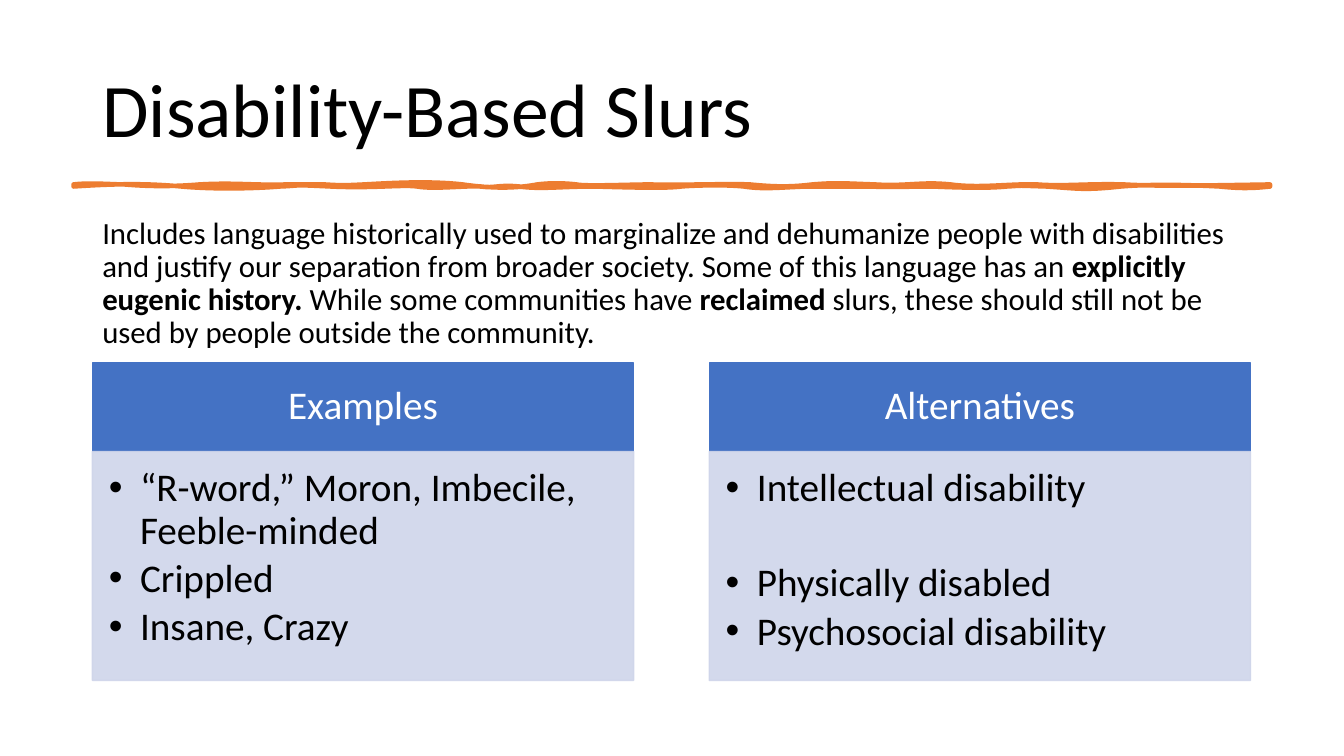
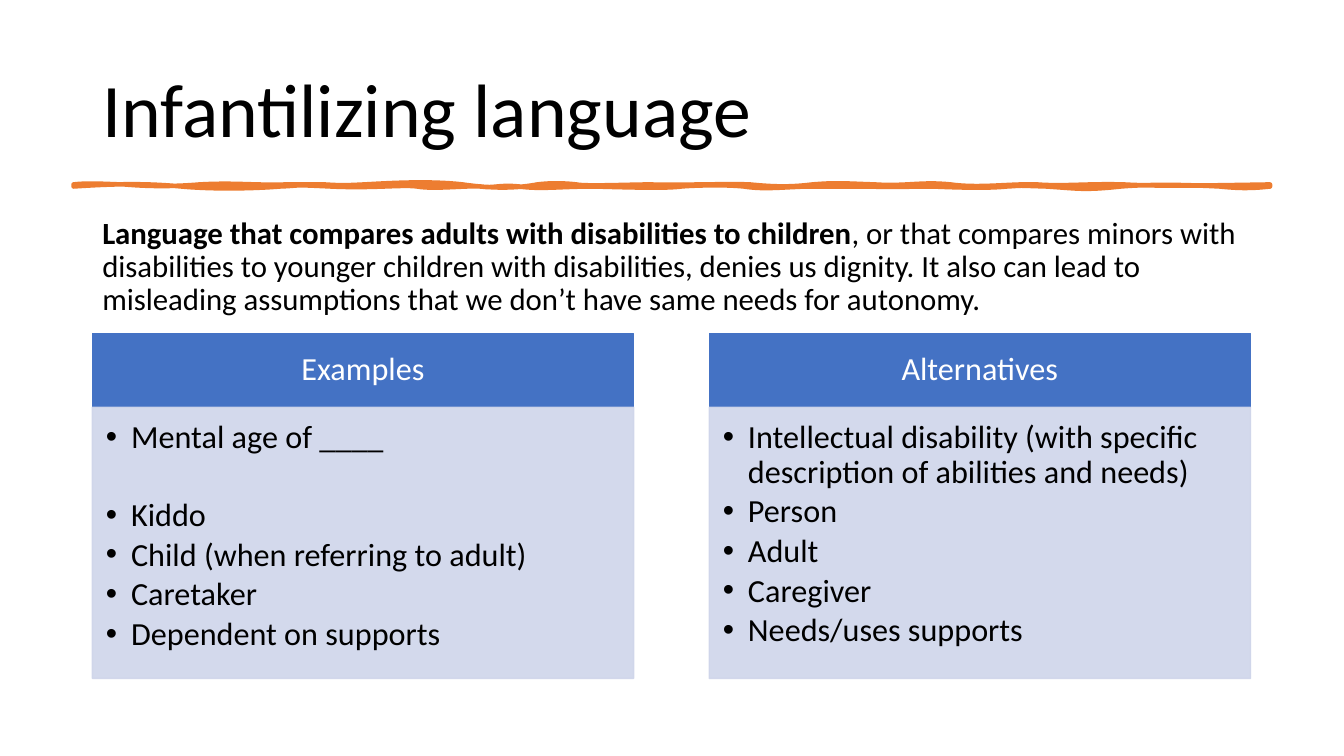
from dataclasses import dataclass
from typing import NamedTuple

from lxml.etree import SubElement
from pptx import Presentation
from pptx.dml.color import RGBColor
from pptx.enum.shapes import MSO_SHAPE as Preset
from pptx.enum.text import MSO_ANCHOR as Anchor, PP_ALIGN as Align
from pptx.oxml.ns import qn
from pptx.util import Inches, Pt

FONT = "Calibri"
BLACK, WHITE = "000000", "FFFFFF"
ORANGE, BLUE, PALE_BLUE = "ED7D31", "4472C4", "CFD5EA"
SLIDE_WIDTH, SLIDE_HEIGHT = 40 / 3, 7.5
CONTENT_WIDTH = 11.5
LEFT = (SLIDE_WIDTH - CONTENT_WIDTH) / 2
COLUMN_WIDTH, COLUMN_STEP = 5.37, 6.12
INTRO_TOP = 2.11
TITLE_SIZE, INTRO_SIZE = 54, 22

BRUSH_START = (0.73, 1.83)
BRUSH_CURVES = (
    (0.89, 1.81, 1.11, 1.83, 1.24, 1.83), (1.36, 1.84, 1.62, 1.86, 1.98, 1.83),
    (2.34, 1.81, 2.51, 1.84, 2.84, 1.83), (3.17, 1.83, 3.07, 1.83, 3.22, 1.83),
    (3.38, 1.84, 3.42, 1.84, 3.61, 1.83), (3.8, 1.82, 4.24, 1.79, 4.59, 1.83),
    (4.94, 1.88, 5.17, 1.86, 5.33, 1.83), (5.49, 1.81, 5.63, 1.82, 5.72, 1.83),
    (5.81, 1.85, 6.25, 1.83, 6.46, 1.83), (6.67, 1.84, 7.23, 1.82, 7.44, 1.83),
    (7.65, 1.85, 7.82, 1.86, 8.06, 1.83), (8.3, 1.81, 8.38, 1.82, 8.68, 1.83),
    (8.99, 1.85, 9.14, 1.8, 9.43, 1.83), (9.72, 1.87, 10.02, 1.82, 10.29, 1.83),
    (10.55, 1.85, 10.78, 1.82, 11.15, 1.83), (11.51, 1.85, 11.99, 1.84, 12.6, 1.83),
    (12.6, 1.84, 12.6, 1.84, 12.6, 1.85), (12.42, 1.87, 12.3, 1.87, 12.1, 1.85),
    (11.9, 1.84, 11.49, 1.82, 11.12, 1.85), (10.75, 1.89, 10.7, 1.87, 10.38, 1.85),
    (10.05, 1.84, 10.18, 1.84, 9.99, 1.85), (9.8, 1.87, 9.48, 1.86, 9.25, 1.85),
    (9.02, 1.85, 8.84, 1.86, 8.63, 1.85), (8.41, 1.85, 8.28, 1.85, 8, 1.85),
    (7.73, 1.86, 7.57, 1.88, 7.38, 1.85), (7.19, 1.83, 6.88, 1.84, 6.76, 1.85),
    (6.63, 1.87, 6.24, 1.86, 5.9, 1.85), (5.55, 1.85, 5.37, 1.88, 5.15, 1.85),
    (4.94, 1.83, 4.91, 1.87, 4.77, 1.85), (4.63, 1.84, 4.3, 1.88, 4.14, 1.85),
    (3.99, 1.83, 3.71, 1.87, 3.28, 1.85), (2.86, 1.83, 3.03, 1.84, 2.78, 1.85),
    (2.53, 1.87, 2.13, 1.88, 1.8, 1.85), (1.47, 1.82, 1.18, 1.82, 0.73, 1.85),
    (0.73, 1.84, 0.73, 1.84, 0.73, 1.83),
)


class Phrase(NamedTuple):
    text: str
    bold: bool = False


class Term(NamedTuple):
    text: str
    gap_after: bool = False


class Box(NamedTuple):
    left: float
    top: float
    width: float
    height: float

    def lengths(self) -> list:
        return [Inches(side) for side in self]


@dataclass(frozen=True)
class Topic:
    title: str
    intro: tuple[Phrase, ...]
    columns: dict[str, tuple[Term, ...]]
    top: float
    heading_height: float
    list_height: float
    size: int
    indent: float


TOPICS = (
    Topic(
        "Disability-Based Slurs",
        (
            Phrase("Includes language historically used to marginalize and dehumanize people "
                   "with disabilities and justify our separation from broader society. "
                   "Some of this language has an "),
            Phrase("explicitly eugenic history. ", True),
            Phrase("While some communities have "),
            Phrase("reclaimed", True),
            Phrase(" slurs, these should still not be used by people outside the community."),
        ),
        {
            "Examples": (Term("“R-word,” Moron, Imbecile, Feeble-minded"),
                         Term("Crippled"), Term("Insane, Crazy")),
            "Alternatives": (Term("Intellectual disability", True),
                             Term("Physically disabled"), Term("Psychosocial disability")),
        },
        top=3.6, heading_height=0.88, list_height=2.27, size=28, indent=0.31,
    ),
    Topic(
        "Infantilizing language",
        (
            Phrase("Language that compares adults with disabilities to children", True),
            Phrase(", or that compares minors with disabilities to younger children with "
                   "disabilities, denies us dignity. It also can lead to misleading "
                   "assumptions that we don’t have same needs for autonomy."),
        ),
        {
            "Examples": (Term("Mental age of ____", True), Term("Kiddo"),
                         Term("Child (when referring to adult)"), Term("Caretaker"),
                         Term("Dependent on supports")),
            "Alternatives": (
                Term("Intellectual disability (with specific description of abilities and needs)"),
                Term("Person"), Term("Adult"), Term("Caregiver"), Term("Needs/uses supports")),
        },
        top=3.31, heading_height=0.73, list_height=2.69, size=23, indent=0.25,
    ),
)


def paint_fill(fill, color: str, opacity: int) -> None:
    fill.solid()
    fill.fore_color.rgb = RGBColor.from_string(color)
    if opacity < 100:
        choice = fill._xPr.find(qn("a:solidFill")).find(qn("a:srgbClr"))
        SubElement(choice, qn("a:alpha")).set("val", str(opacity * 1000))


def paint_shape(shape, color: str, line_width: float, opacity: int = 100) -> None:
    shape.shadow.inherit = False
    shape.line.width = Pt(line_width)
    for fill in (shape.fill, shape.line.fill):
        paint_fill(fill, color, opacity)


def set_frame(frame, anchor: Anchor, insets: tuple[float, ...]) -> None:
    frame.word_wrap = True
    frame.vertical_anchor = anchor
    (frame.margin_left, frame.margin_top,
     frame.margin_right, frame.margin_bottom) = (Inches(inset) for inset in insets)


def write(paragraph, phrases: tuple[Phrase, ...], size: int, color: str = BLACK,
          align: Align = Align.LEFT) -> None:
    paragraph.alignment = align
    paragraph.line_spacing = 0.9
    for phrase in phrases:
        run = paragraph.add_run()
        run.text = phrase.text
        run.font.name = FONT
        run.font.size = Pt(size)
        run.font.bold = phrase.bold
        run.font.color.rgb = RGBColor.from_string(color)


def add_text(slide, box: Box, phrases: tuple[Phrase, ...], size: int, anchor: Anchor) -> None:
    frame = slide.shapes.add_textbox(*box.lengths()).text_frame
    set_frame(frame, anchor, (0.1, 0.05, 0.1, 0.05))
    write(frame.paragraphs[0], phrases, size)


def add_panel(slide, box: Box, color: str, opacity: int = 100):
    panel = slide.shapes.add_shape(Preset.RECTANGLE, *box.lengths())
    paint_shape(panel, color, 1, opacity)
    return panel.text_frame


def add_bullet(paragraph, indent: float) -> None:
    properties = paragraph._p.get_or_add_pPr()
    properties.set("marL", str(Inches(indent)))
    properties.set("indent", str(-Inches(indent)))
    SubElement(properties, qn("a:buFont")).set("typeface", "Arial")
    SubElement(properties, qn("a:buChar")).set("char", "•")


def add_brush_stroke(slide) -> None:
    origin_x, origin_y = BRUSH_START
    builder = slide.shapes.build_freeform(Inches(origin_x), Inches(origin_y))
    builder.add_line_segments([(Inches(x), Inches(y)) for *_, x, y in BRUSH_CURVES], close=True)
    stroke = builder.convert_to_shape()
    paint_shape(stroke, ORANGE, 3.25)
    for segment, curve in zip(list(stroke._element.iter(qn("a:lnTo"))), BRUSH_CURVES):
        bend = SubElement(segment.getparent(), qn("a:cubicBezTo"))
        for x, y in zip(curve[::2], curve[1::2]):
            knot = SubElement(bend, qn("a:pt"))
            knot.set("x", str(Inches(x - origin_x)))
            knot.set("y", str(Inches(y - origin_y)))
        segment.getparent().replace(segment, bend)


def add_column(slide, topic: Topic, left: float, heading: str, terms: tuple[Term, ...]) -> None:
    size = topic.size
    side, edge, near, bottom = (size / 72 * ems for ems in (0.56, 0.32, 0.42, 0.63))

    caption = add_panel(slide, Box(left, topic.top, COLUMN_WIDTH, topic.heading_height), BLUE)
    set_frame(caption, Anchor.MIDDLE, (side, edge, side, edge))
    write(caption.paragraphs[0], (Phrase(heading),), size, WHITE, Align.CENTER)

    list_top = topic.top + topic.heading_height
    listing = add_panel(slide, Box(left, list_top, COLUMN_WIDTH, topic.list_height),
                        PALE_BLUE, 90)
    set_frame(listing, Anchor.TOP, (near, near, side, bottom))
    for index, term in enumerate(terms):
        paragraph = listing.add_paragraph() if index else listing.paragraphs[0]
        write(paragraph, (Phrase(term.text),), size)
        paragraph.space_after = Pt(size * (1.34 if term.gap_after else 0.15))
        add_bullet(paragraph, topic.indent)


def add_topic(deck, topic: Topic) -> None:
    slide = deck.slides.add_slide(deck.slide_layouts[6])
    add_text(slide, Box(LEFT, 0.4, CONTENT_WIDTH, 1.45), (Phrase(topic.title),),
             TITLE_SIZE, Anchor.MIDDLE)
    add_brush_stroke(slide)
    add_text(slide, Box(LEFT, INTRO_TOP, CONTENT_WIDTH, 4.65), topic.intro,
             INTRO_SIZE, Anchor.TOP)
    for index, (heading, terms) in enumerate(topic.columns.items()):
        add_column(slide, topic, LEFT + index * COLUMN_STEP, heading, terms)


def main() -> None:
    deck = Presentation()
    deck.slide_width, deck.slide_height = Inches(SLIDE_WIDTH), Inches(SLIDE_HEIGHT)
    for topic in TOPICS:
        add_topic(deck, topic)
    deck.save("out.pptx")


if __name__ == "__main__":
    main()
